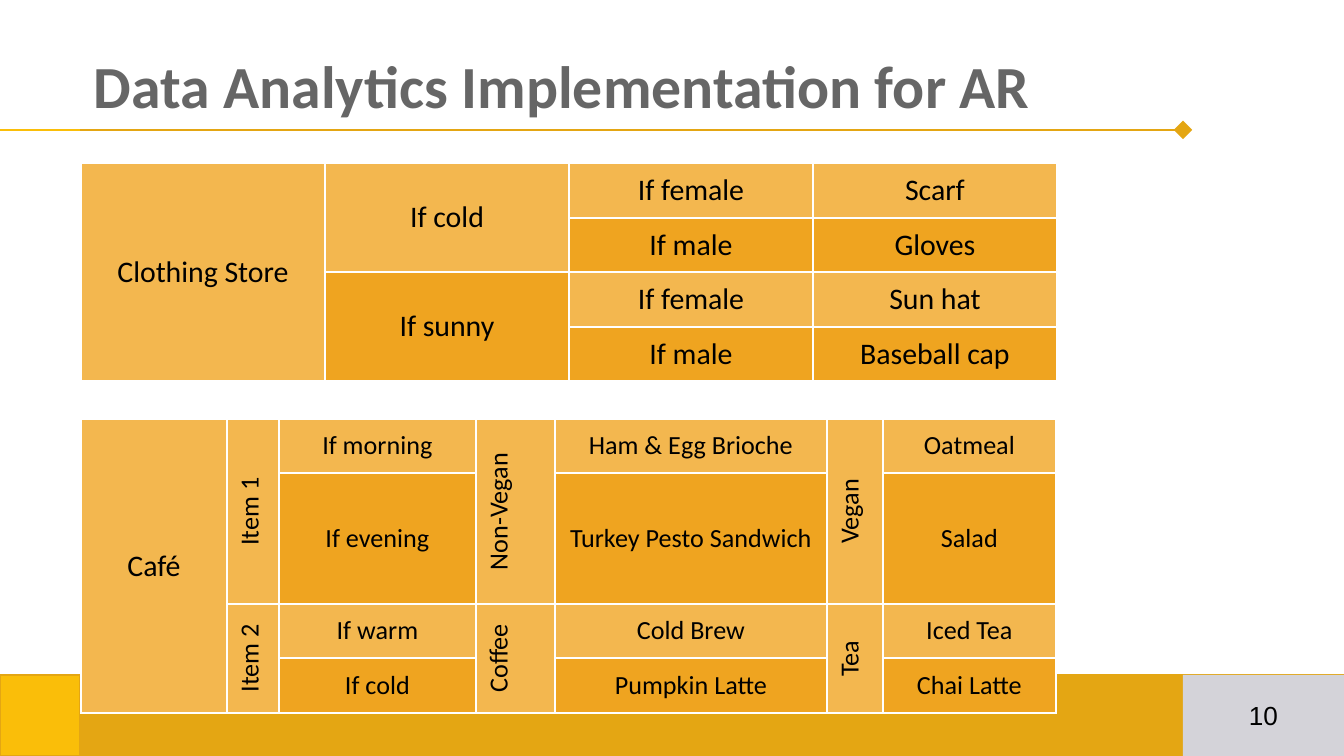
"""Build a slide with two decision tables for an AR data analytics plan."""
from pptx import Presentation
from pptx.dml.color import RGBColor
from pptx.enum.shapes import MSO_CONNECTOR, MSO_SHAPE
from pptx.enum.text import MSO_ANCHOR, PP_ALIGN
from pptx.oxml.ns import qn
from pptx.util import Emu, Pt
from lxml import etree

RECTANGLE = MSO_SHAPE.RECTANGLE
STRAIGHT = MSO_CONNECTOR.STRAIGHT
MIDDLE, BOTTOM = MSO_ANCHOR.MIDDLE, MSO_ANCHOR.BOTTOM
LEFT, CENTER = PP_ALIGN.LEFT, PP_ALIGN.CENTER
EMU_PER_PX = 914400 / 134.4
ROW_COUNT = 4

THEME = {
    "gold": "E4A613", "yellow": "FABE09", "gray": "D4D3D9",
    "light": "F3B74F", "dark": "EFA420", "border": "FFFFFF",
    "title": {"name": "Calibri", "size": Pt(32), "bold": True, "color": "666666"},
    "large": {"name": "Calibri", "size": Pt(16), "color": "000000"},
    "small": {"name": "Calibri", "size": Pt(14), "color": "000000"},
    "number": {"name": "Arial", "size": Pt(14), "color": "000000"},
}

TITLE = "Data Analytics Implementation for AR"
PAGE_NUMBER = "10"
RULES = [(-1, 1183, "gold", "diamond"), (-1, 80, "yellow", None)]
FOOTER = [(0, 1344, "gold", "gold"), (0, 80, "yellow", "gold"), (1183, 161, "gray", None)]

TABLES = [
    {"top": 163, "rows": [55, 54, 55, 54], "columns": [
        (244, "large", False, ["Clothing Store"]),
        (244, "large", False, ["If cold", "If sunny"]),
        (244, "large", False, ["If female", "If male", "If female", "If male"]),
        (244, "large", False, ["Scarf", "Gloves", "Sun hat", "Baseball cap"]),
    ]},
    {"top": 419, "rows": [54, 131, 54, 55], "columns": [
        (146, "large", False, ["Café"]),
        (52, "small", True, ["Item 1", "Item 2"]),
        (197, "small", False, ["If morning", "If evening", "If warm", "If cold"]),
        (79, "small", True, ["Non-Vegan", "Coffee"]),
        (272, "small", False, ["Ham & Egg Brioche", "Turkey Pesto Sandwich",
                               "Cold Brew", "Pumpkin Latte"]),
        (56, "small", True, ["Vegan", "Tea"]),
        (173, "small", False, ["Oatmeal", "Salad", "Iced Tea", "Chai Latte"]),
    ]},
]


def px(value):
    return Emu(round(value * EMU_PER_PX))


def color(name):
    return RGBColor.from_string(THEME.get(name, name))


def write(frame, text, style, align):
    paragraph = frame.paragraphs[0]
    paragraph.alignment = align
    run = paragraph.add_run()
    run.text = text
    for name, value in THEME[style].items():
        if name == "color":
            run.font.color.rgb = color(value)
        else:
            setattr(run.font, name, value)


def set_frame(frame, anchor):
    values = {"word_wrap": True, "vertical_anchor": anchor}
    values.update({f"margin_{side}": px(13) for side in ("left", "right", "top", "bottom")})
    for name, value in values.items():
        setattr(frame, name, value)


def add_rule(slide, left, right, fill, tail):
    rule = slide.shapes.add_connector(STRAIGHT, px(left), px(130), px(right), px(130))
    rule.line.color.rgb = color(fill)
    rule.line.width = Pt(1.5)
    if tail:
        line = rule.line._get_or_add_ln()
        etree.SubElement(line, qn("a:tailEnd"), type=tail, w="lg", len="lg")
    etree.SubElement(rule._element.spPr, qn("a:effectLst"))


def add_block(slide, left, width, fill, outline):
    block = slide.shapes.add_shape(RECTANGLE, px(left), px(675), px(width), px(81))
    block.shadow.inherit = False
    block.fill.solid()
    block.fill.fore_color.rgb = color(fill)
    if outline:
        block.line.color.rgb = color(outline)
        block.line.width = Pt(0.75)
    else:
        block.line.fill.background()
    return block


def style_cell(cell, fill, vertical):
    cell.fill.solid()
    cell.fill.fore_color.rgb = color(fill)
    cell.vertical_anchor = MIDDLE
    properties = cell._tc.get_or_add_tcPr()
    if vertical:
        properties.set("vert", "vert270")
    for index, side in enumerate(("lnL", "lnR", "lnT", "lnB")):
        border = etree.Element(qn(f"a:{side}"), w=str(Pt(1)))
        solid = etree.SubElement(border, qn("a:solidFill"))
        etree.SubElement(solid, qn("a:srgbClr"), val=THEME["border"])
        properties.insert(index, border)


def add_decision_table(slide, top, rows, columns):
    width = sum(column[0] for column in columns)
    table = slide.shapes.add_table(
        ROW_COUNT, len(columns), px(81), px(top), px(width), px(sum(rows))).table
    table.first_row = table.horz_banding = False
    for row, height in zip(table.rows, rows):
        row.height = px(height)
    for x, (width, style, vertical, texts) in enumerate(columns):
        table.columns[x].width = px(width)
        span = ROW_COUNT // len(texts)
        for y in range(ROW_COUNT):
            dark = not vertical and y // span % 2
            style_cell(table.cell(y, x), "dark" if dark else "light", vertical)
        for index, text in enumerate(texts):
            cell = table.cell(index * span, x)
            if span > 1:
                cell.merge(table.cell((index + 1) * span - 1, x))
            write(cell.text_frame, text, style, CENTER)


def main():
    presentation = Presentation()
    presentation.slide_width, presentation.slide_height = px(1344), px(756)
    slide = presentation.slides.add_slide(presentation.slide_layouts[6])
    for rule in RULES:
        add_rule(slide, *rule)
    blocks = [add_block(slide, *block) for block in FOOTER]
    set_frame(blocks[-1].text_frame, MIDDLE)
    write(blocks[-1].text_frame, PAGE_NUMBER, "number", CENTER)
    for table in TABLES:
        add_decision_table(slide, **table)
    title = slide.shapes.add_textbox(px(81), px(54), px(1077), px(80))
    set_frame(title.text_frame, BOTTOM)
    write(title.text_frame, TITLE, "title", LEFT)
    presentation.save("out.pptx")


if __name__ == "__main__":
    main()
